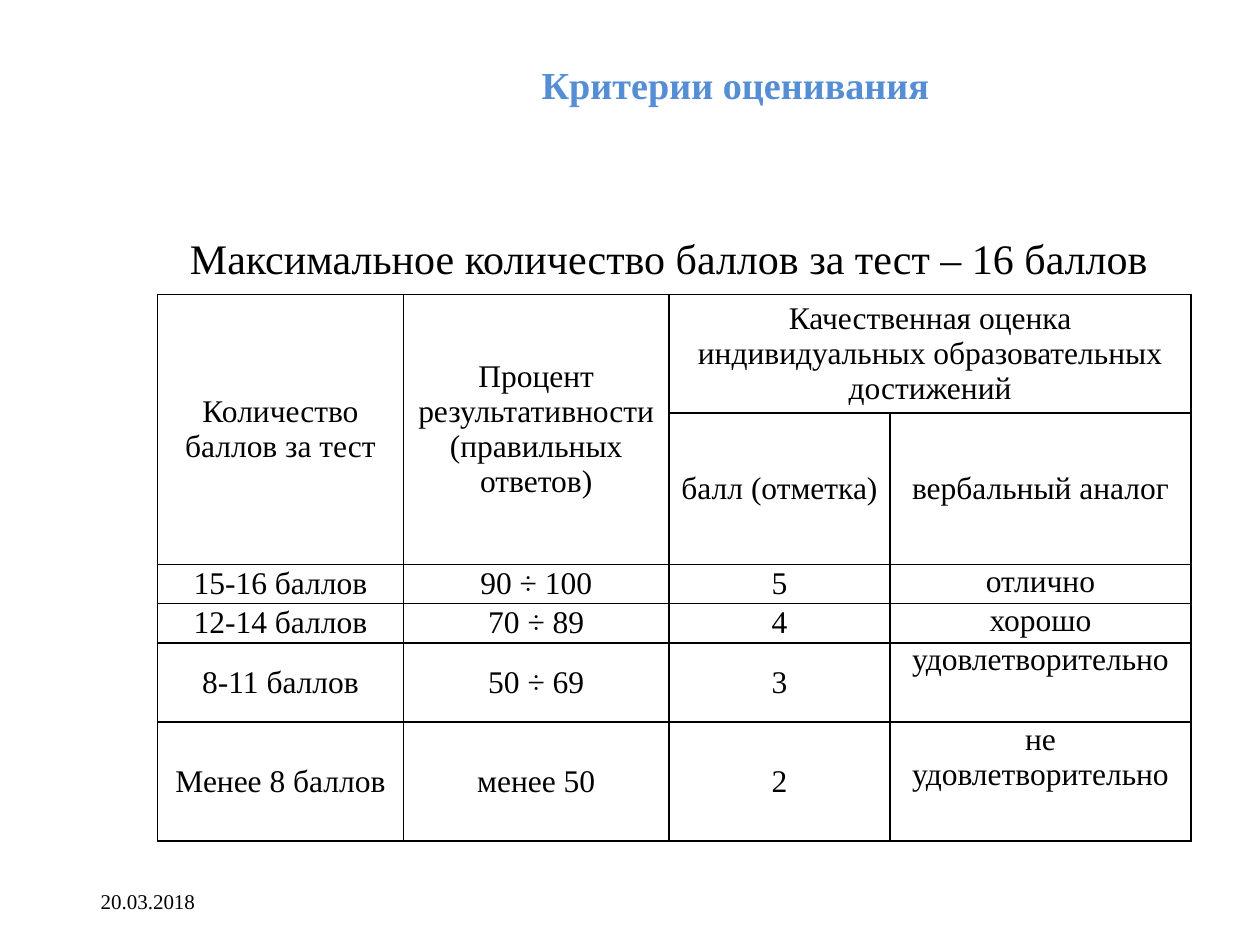
"""Build a slide with the grading criteria for a test."""
from dataclasses import dataclass

from lxml import etree
from pptx import Presentation
from pptx.dml.color import RGBColor
from pptx.enum import text
from pptx.oxml import ns
from pptx.util import Cm, Pt


@dataclass
class Theme:
    font: str = "Times New Roman"
    ink: str = "000000"
    blue: str = "558ED5"
    title: float = 21.8
    lead: float = 24
    body: float = 18
    date: float = 12


theme = Theme()
mid = text.MSO_ANCHOR.MIDDLE
top = text.MSO_ANCHOR.TOP
center = text.PP_ALIGN.CENTER


def write(frame, words, size, color=theme.ink, align=None, bold=False):
    frame.word_wrap = True
    para = frame.paragraphs[0]
    para.text = words
    para.alignment = align
    para.font.name = theme.font
    para.font.size = Pt(size)
    para.font.bold = bold
    para.font.color.rgb = RGBColor.from_string(color)


def border(cell):
    props = cell._tc.get_or_add_tcPr()
    for side in ("lnL", "lnR", "lnT", "lnB"):
        line = etree.SubElement(props, ns.qn(f"a:{side}"), w=str(Pt(1)))
        fill = etree.SubElement(line, ns.qn("a:solidFill"))
        etree.SubElement(fill, ns.qn("a:srgbClr"), val=theme.ink)


deck = Presentation()
deck.slide_width, deck.slide_height = Cm(25.4), Cm(19.05)
slide = deck.slides.add_slide(deck.slide_layouts[5])

title = slide.shapes.title
title.left, title.top, title.width, title.height = Cm(5.94), Cm(0.58), Cm(17.78), Cm(1.98)
frame = title.text_frame
frame.auto_size = text.MSO_AUTO_SIZE.NONE
frame.vertical_anchor = top
frame.margin_top = Cm(0.66)
write(frame, "Критерии оценивания", theme.title, theme.blue, center, True)

date = slide.shapes.add_textbox(Cm(1.78), Cm(17.65), Cm(5.92), Cm(1.02))
date.text_frame.vertical_anchor = mid
write(date.text_frame, "20.03.2018", theme.date)

cols = [4.95, 5.36, 4.45, 6.07]
rows = [2.39, 1.6, 0.79, 0.79, 1.6, 2.39]
data = [
    ["Количество баллов за тест", "Процент результативности (правильных ответов)",
     "Качественная оценка индивидуальных образовательных достижений", ""],
    ["", "", "балл (отметка)", "вербальный аналог"],
    ["15-16 баллов", "90 ÷ 100", "5", "отлично"],
    ["12-14 баллов", "70 ÷ 89", "4", "хорошо"],
    ["8-11 баллов", "50 ÷ 69", "3", "удовлетворительно"],
    ["Менее 8 баллов", "менее 50", "2", "не удовлетворительно"],
]
grid = slide.shapes.add_table(len(rows), len(cols), Cm(3.18), Cm(5.94),
                              Cm(sum(cols)), Cm(sum(rows))).table
grid.first_row = grid.horz_banding = False
for col, width in zip(grid.columns, cols):
    col.width = Cm(width)
for row, height in zip(grid.rows, rows):
    row.height = Cm(height)
for start, end in (((0, 0), (1, 0)), ((0, 1), (1, 1)), ((0, 2), (0, 3))):
    grid.cell(*start).merge(grid.cell(*end))

for r, line in enumerate(data):
    for c, words in enumerate(line):
        cell = grid.cell(r, c)
        border(cell)
        cell.fill.background()
        cell.margin_left = cell.margin_right = Cm(0.18)
        cell.margin_top = cell.margin_bottom = 0
        cell.vertical_anchor = top if r > 1 and c == 3 else mid
        if not cell.is_spanned:
            write(cell.text_frame, words, theme.body, align=center)

lead = slide.shapes.add_textbox(Cm(3.58), Cm(4.57), Cm(21.03), Cm(1.27))
write(lead.text_frame, "Максимальное количество баллов за тест – 16 баллов",
      theme.lead, align=text.PP_ALIGN.JUSTIFY)
lead.text_frame.auto_size = text.MSO_AUTO_SIZE.SHAPE_TO_FIT_TEXT

deck.save("out.pptx")
